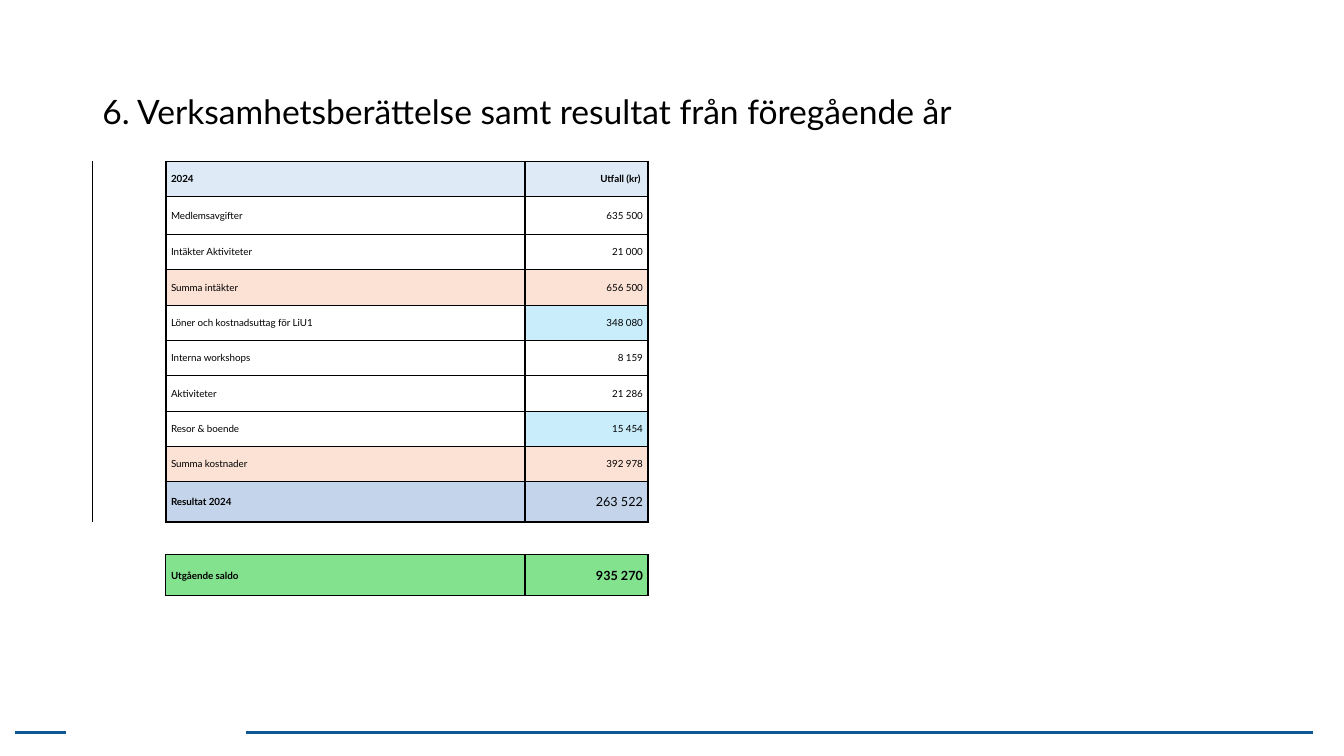
"""Build the slide with the 2024 financial result and closing balance."""
from dataclasses import dataclass

from lxml import etree
from pptx import Presentation
from pptx.dml.color import RGBColor
from pptx.enum.shapes import MSO_CONNECTOR
from pptx.enum.text import MSO_ANCHOR, PP_ALIGN
from pptx.oxml.ns import qn
from pptx.util import Cm, Pt

STRAIGHT = MSO_CONNECTOR.STRAIGHT
MIDDLE = MSO_ANCHOR.MIDDLE
LEFT, RIGHT = PP_ALIGN.LEFT, PP_ALIGN.RIGHT


@dataclass(frozen=True)
class Theme:
    font: str = "Lato"
    text: str = "000000"
    rule: str = "105895"
    header: str = "DEEBF7"
    subtotal: str = "FBE2D5"
    highlight: str = "CAEDFB"
    result: str = "C4D5EB"
    balance: str = "83E28E"
    title_size: float = 24
    cell_size: float = 7
    total_size: float = 9
    rule_width: float = 2.25
    thin: float = 1
    thick: float = 1.5


THEME = Theme()
TITLE = "6. Verksamhetsberättelse samt resultat från föregående år"
ROWS = [
    ("2024", "Utfall (kr) ", "header"),
    ("Medlemsavgifter", "635 500", "plain"),
    ("Intäkter Aktiviteter", "21 000", "plain"),
    ("Summa intäkter", "656 500", "subtotal"),
    ("Löner och kostnadsuttag för LiU1", "348 080", "highlight"),
    ("Interna workshops", "8 159", "plain"),
    ("Aktiviteter", "21 286", "plain"),
    ("Resor & boende", "15 454", "highlight"),
    ("Summa kostnader", "392 978", "subtotal"),
    ("Resultat 2024", "263 522", "result"),
    ("", "", "gap"),
    ("Utgående saldo", "935 270", "balance"),
]
FILLS = {
    "header": (THEME.header, THEME.header),
    "subtotal": (THEME.subtotal, THEME.subtotal),
    "highlight": (None, THEME.highlight),
    "result": (THEME.result, THEME.result),
    "balance": (THEME.balance, THEME.balance),
}
BOLD = {"header": (True, True), "result": (True, False), "balance": (True, True)}
COLUMN_WIDTHS = (1.85, 9.05, 3.1)
ROW_HEIGHT = 0.89
SPECIAL_HEIGHTS = {1: 0.96, 9: 1.02, 10: 0.82, 11: 1.03}
TABLE_LEFT, TABLE_TOP = 2.33, 4.06
RULE_Y = 18.46
RULES = [(6.2, 33.1), (0.38, 1.66)]


def style_font(font, size, bold=False):
    font.name = THEME.font
    font.size = Pt(size)
    font.bold = bold
    font.color.rgb = RGBColor.from_string(THEME.text)


def add_rule(slide, start, end):
    rule = slide.shapes.add_connector(STRAIGHT, Cm(start), Cm(RULE_Y), Cm(end), Cm(RULE_Y))
    rule.line.color.rgb = RGBColor.from_string(THEME.rule)
    rule.line.width = Pt(THEME.rule_width)
    etree.SubElement(rule._element.spPr, qn("a:effectLst"))


def add_title(slide):
    box = slide.shapes.add_textbox(Cm(2.33), Cm(1.02), Cm(29.21), Cm(3.68))
    frame = box.text_frame
    frame.word_wrap = True
    frame.vertical_anchor = MIDDLE
    paragraph = frame.paragraphs[0]
    paragraph.text = TITLE
    paragraph.line_spacing = 0.9
    style_font(paragraph.font, THEME.title_size)


def set_borders(cell, widths):
    properties = cell._tc.get_or_add_tcPr()
    for side in "LRTB":
        width = widths.get(side, 0)
        line = etree.SubElement(properties, qn(f"a:ln{side}"), w=str(int(Pt(width))))
        if width:
            fill = etree.SubElement(line, qn("a:solidFill"))
            etree.SubElement(fill, qn("a:srgbClr"), val=THEME.text)
        else:
            etree.SubElement(line, qn("a:noFill"))


def border_widths(kind, column):
    thin, thick = THEME.thin, THEME.thick
    if column == 0:
        return {"gap": {}, "balance": {"R": thin}}.get(kind, {"L": thin, "R": thick})
    if kind == "gap":
        return {"T": thick, "B": thin}
    widths = dict.fromkeys("LRTB", thin)
    if column == 1 and kind != "balance":
        widths["L"] = thick
    if kind == "result":
        widths["B"] = thick
    return widths


def fill_cell(cell, text, kind, column):
    set_borders(cell, border_widths(kind, column))
    color = FILLS.get(kind, (None, None))[column - 1] if column else None
    if color:
        cell.fill.solid()
        cell.fill.fore_color.rgb = RGBColor.from_string(color)
    else:
        cell.fill.background()
    margin = Cm(0.13) if text else 0
    cell.margin_left = cell.margin_right = cell.margin_top = cell.margin_bottom = margin
    cell.vertical_anchor = MIDDLE
    paragraph = cell.text_frame.paragraphs[0]
    if text:
        paragraph.text = text
    paragraph.alignment = RIGHT if column == 2 else LEFT
    is_total = column == 2 and kind in ("result", "balance")
    bold = BOLD.get(kind, (False, False))[column - 1] if column else False
    style_font(paragraph.font, THEME.total_size if is_total else THEME.cell_size, bold)


def add_result_table(slide):
    heights = [SPECIAL_HEIGHTS.get(index, ROW_HEIGHT) for index in range(len(ROWS))]
    table = slide.shapes.add_table(
        len(ROWS), len(COLUMN_WIDTHS), Cm(TABLE_LEFT), Cm(TABLE_TOP),
        Cm(sum(COLUMN_WIDTHS)), Cm(sum(heights)),
    ).table
    table.first_row = table.horz_banding = False
    for column, width in zip(table.columns, COLUMN_WIDTHS):
        column.width = Cm(width)
    for row, height, (label, amount, kind) in zip(table.rows, heights, ROWS):
        row.height = Cm(height)
        for column, text in enumerate(("", label, amount)):
            fill_cell(row.cells[column], text, kind, column)


def main():
    presentation = Presentation()
    presentation.slide_width, presentation.slide_height = Cm(33.87), Cm(19.05)
    slide = presentation.slides.add_slide(presentation.slide_layouts[6])
    for start, end in RULES:
        add_rule(slide, start, end)
    add_title(slide)
    add_result_table(slide)
    presentation.save("out.pptx")


if __name__ == "__main__":
    main()
